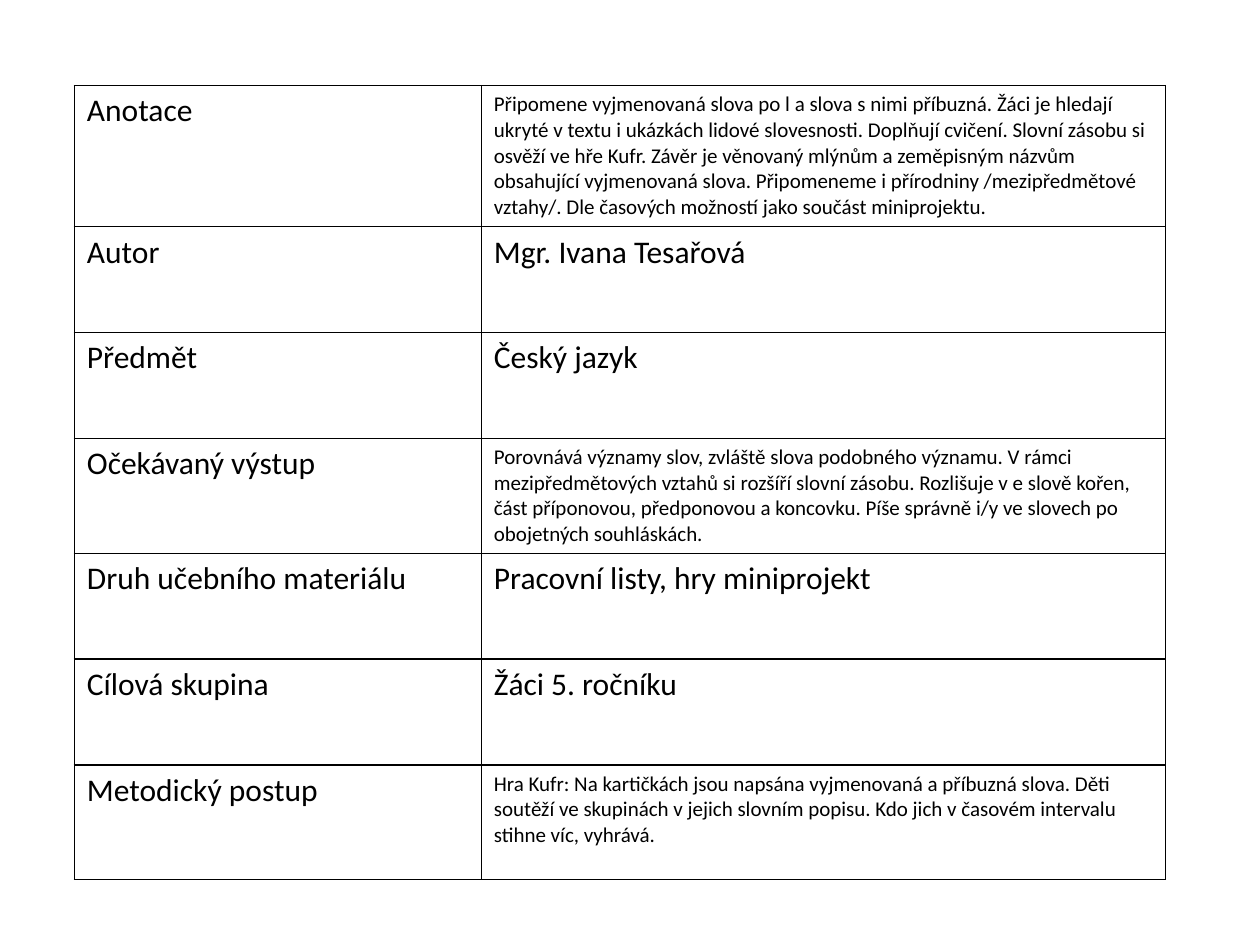
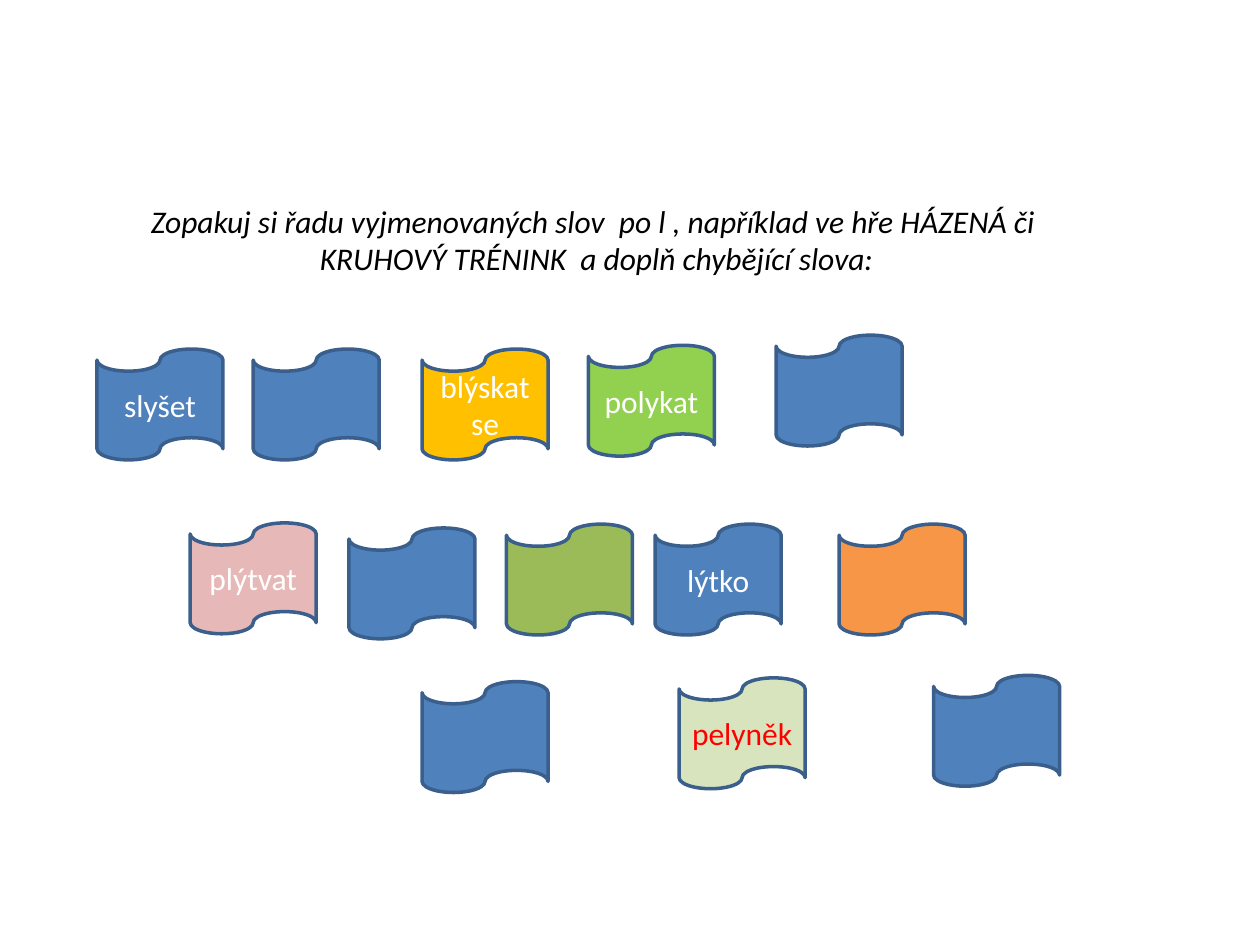
from lxml.etree import SubElement
from pptx import Presentation
from pptx.dml.color import RGBColor
from pptx.enum.shapes import MSO_SHAPE
from pptx.enum.text import MSO_ANCHOR, MSO_AUTO_SIZE, PP_ALIGN
from pptx.oxml.ns import qn
from pptx.util import Inches, Pt

BLACK = RGBColor(0x00, 0x00, 0x00)
WHITE = RGBColor(0xFF, 0xFF, 0xFF)
RED = RGBColor(0xFF, 0x00, 0x00)
BLUE = RGBColor(0x4F, 0x81, 0xBD)
NAVY = RGBColor(0x3A, 0x5F, 0x8C)
GOLD = RGBColor(0xFF, 0xC0, 0x00)
LIME = RGBColor(0x92, 0xD0, 0x50)
OLIVE = RGBColor(0x9B, 0xBB, 0x59)
ORANGE = RGBColor(0xF7, 0x96, 0x46)
PINK = RGBColor(0xE6, 0xB9, 0xB8)
PALE = RGBColor(0xD7, 0xE4, 0xBD)

BIG, SMALL = 18, 12
ROW = 0.84

# label, text, text size, row height
FACTS = [
    ("Anotace",
     "Připomene vyjmenovaná slova po l a slova s nimi příbuzná. Žáci je hledají "
     "ukryté v textu i ukázkách lidové slovesnosti. Doplňují cvičení. Slovní zásobu "
     "si osvěží ve hře Kufr. Závěr je věnovaný mlýnům a zeměpisným názvům obsahující "
     "vyjmenovaná slova. Připomeneme i přírodniny /mezipředmětové vztahy/. "
     "Dle časových možností jako součást miniprojektu.", SMALL, 1.12),
    ("Autor", "Mgr. Ivana Tesařová", BIG, ROW),
    ("Předmět", "Český jazyk", BIG, ROW),
    ("Očekávaný výstup",
     "Porovnává významy slov, zvláště slova podobného významu. V rámci "
     "mezipředmětových vztahů si rozšíří slovní zásobu. Rozlišuje v e slově kořen, "
     "část příponovou, předponovou a koncovku. Píše správně i/y ve slovech po "
     "obojetných souhláskách.", SMALL, 0.91),
    ("Druh učebního materiálu", "Pracovní listy, hry miniprojekt", BIG, ROW),
    ("Cílová skupina", "Žáci 5. ročníku", BIG, ROW),
    ("Metodický postup",
     "Hra Kufr: Na kartičkách jsou napsána vyjmenovaná a příbuzná slova. Děti "
     "soutěží ve skupinách v jejich slovním popisu. Kdo jich v časovém intervalu "
     "stihne víc, vyhrává.", SMALL, 0.91),
]

TASK = ["Zopakuj si řadu vyjmenovaných slov  po l , například ve hře HÁZENÁ či ",
        "KRUHOVÝ TRÉNINK  a doplň chybějící slova:"]

# left, top, fill, word, word colour
FLAGS = [
    (0.77, 2.77, BLUE, "slyšet", WHITE),
    (2.01, 2.77, BLUE, "", WHITE),
    (3.35, 2.77, GOLD, "blýskat se", WHITE),
    (4.67, 2.74, LIME, "polykat", WHITE),
    (6.16, 2.66, BLUE, "", WHITE),
    (1.51, 4.15, PINK, "plýtvat", WHITE),
    (2.77, 4.19, BLUE, "", WHITE),
    (4.02, 4.16, OLIVE, "", WHITE),
    (5.2, 4.16, BLUE, "lýtko", WHITE),
    (6.66, 4.16, ORANGE, "", WHITE),
    (3.35, 5.41, BLUE, "", WHITE),
    (5.39, 5.38, PALE, "pelyněk", RED),
    (7.41, 5.36, BLUE, "", WHITE),
]


class Deck:
    font = "Calibri"

    def __init__(self):
        self.prs = Presentation()
        self.prs.slide_width = Inches(10)
        self.prs.slide_height = Inches(7.5)
        self.slide = None

    def page(self):
        self.slide = self.prs.slides.add_slide(self.prs.slide_layouts[6])

    def words(self, frame, text, size=BIG, color=BLACK, align=PP_ALIGN.LEFT,
              italic=False):
        """Fill a text frame and style its paragraphs."""
        frame.text = text
        for para in frame.paragraphs:
            para.alignment = align
            font = para.font
            font.name, font.size, font.italic = self.font, Pt(size), italic
            font.color.rgb = color

    def border(self, cell):
        """Draw a thin black border on all four sides of a cell."""
        props = cell._tc.get_or_add_tcPr()
        for spot, side in enumerate(("lnL", "lnR", "lnT", "lnB")):
            line = SubElement(props, qn(f"a:{side}"), w=str(Pt(1)))
            fill = SubElement(line, qn("a:solidFill"))
            SubElement(fill, qn("a:srgbClr"), val=str(BLACK))
            props.insert(spot, line)

    def table(self, left, top, widths, facts):
        height = sum(fact[3] for fact in facts)
        table = self.slide.shapes.add_table(
            len(facts), len(widths), Inches(left), Inches(top),
            Inches(sum(widths)), Inches(height)).table
        table.first_row = table.horz_banding = False
        for col, width in zip(table.columns, widths):
            col.width = Inches(width)
        for row, (label, text, size, high) in zip(table.rows, facts):
            row.height = Inches(high)
            for cell, entry, points in zip(row.cells, (label, text), (BIG, size)):
                cell.fill.background()
                self.border(cell)
                self.words(cell.text_frame, entry, points)

    def label(self, left, top, width, height, lines):
        box = self.slide.shapes.add_textbox(
            Inches(left), Inches(top), Inches(width), Inches(height))
        frame = box.text_frame
        frame.word_wrap = False
        frame.auto_size = MSO_AUTO_SIZE.SHAPE_TO_FIT_TEXT
        self.words(frame, "\n".join(lines), align=PP_ALIGN.CENTER, italic=True)

    def flag(self, left, top, fill, word, color):
        flag = self.slide.shapes.add_shape(
            MSO_SHAPE.FLOWCHART_PUNCHED_TAPE,
            Inches(left), Inches(top), Inches(1), Inches(0.88))
        flag.shadow.inherit = False
        flag.fill.solid()
        flag.fill.fore_color.rgb = fill
        flag.line.color.rgb = NAVY
        flag.line.width = Pt(2)
        if word:
            flag.text_frame.vertical_anchor = MSO_ANCHOR.MIDDLE
            self.words(flag.text_frame, word, color=color, align=PP_ALIGN.CENTER)


def main():
    deck = Deck()

    deck.page()
    deck.table(0.59, 0.68, (3.23, 5.43), FACTS)

    deck.page()
    deck.label(1.06, 1.55, 7.35, 0.71, TASK)
    for flag in FLAGS:
        deck.flag(*flag)

    deck.prs.save("out.pptx")


if __name__ == "__main__":
    main()
